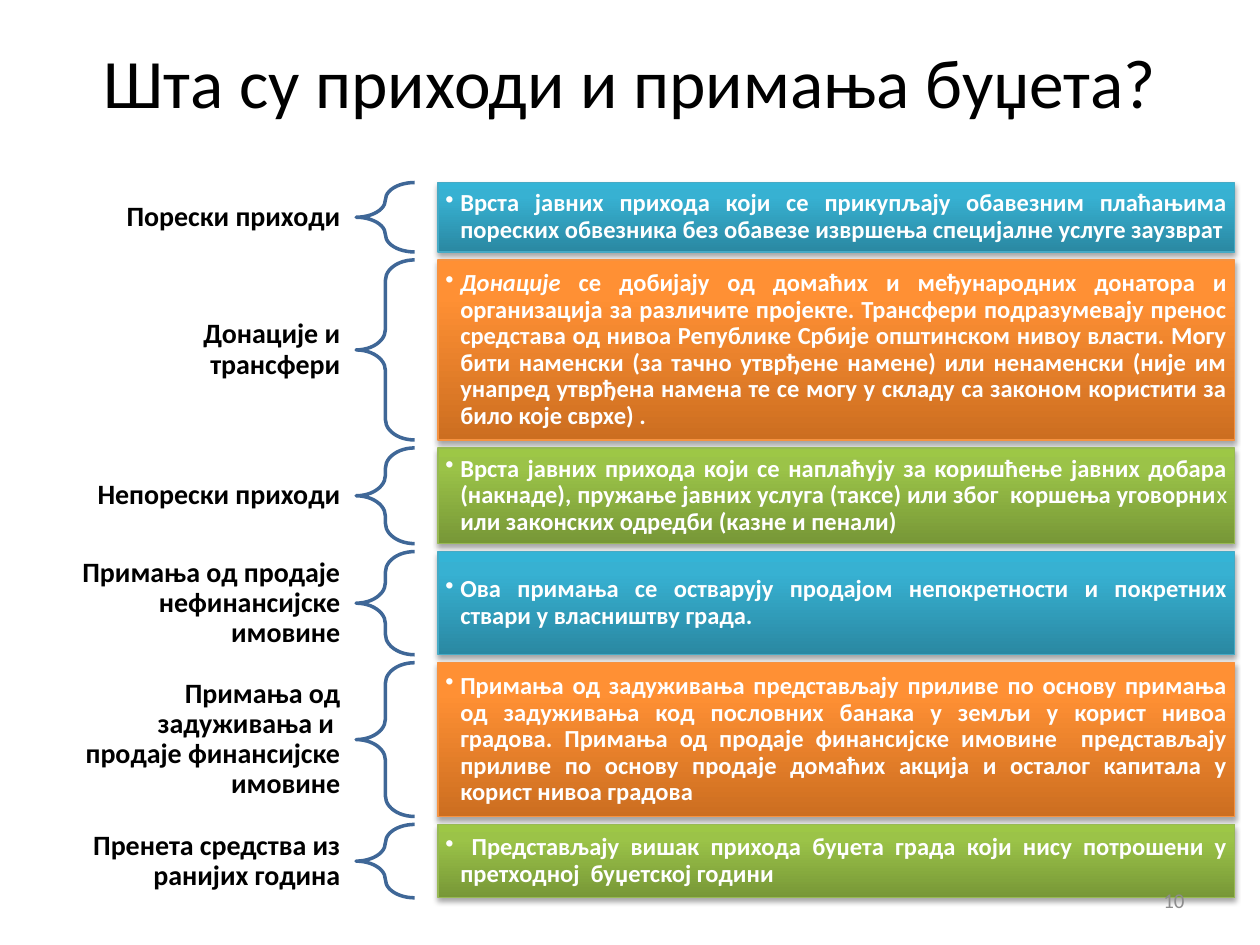
from dataclasses import dataclass

from pptx import Presentation
from pptx import util as u
from pptx.dml.color import RGBColor
from pptx.enum import shapes, text
from pptx.oxml import parse_xml
from pptx.oxml.ns import nsdecls, qn

Cm, Pt = u.Cm, u.Pt

FONT = "Calibri"
BLACK = RGBColor(0x00, 0x00, 0x00)
WHITE = RGBColor(0xFF, 0xFF, 0xFF)
GREY = RGBColor(0x8C, 0x8C, 0x8C)
BRACE_BLUE = RGBColor(0x3F, 0x67, 0x97)

MARGIN = 1.27
LABEL_WIDTH = 5.9
BRACE_LEFT, BRACE_WIDTH = 7.18, 1.18
PANEL_LEFT, PANEL_WIDTH = 8.83, 16.06
FIRST_TOP, ROW_GAP = 3.68, 0.16


@dataclass(frozen=True)
class Palette:
    bottom: RGBColor
    upper: RGBColor
    top: RGBColor
    border: RGBColor


@dataclass(frozen=True)
class Span:
    wording: str
    bold: bool = True
    italic: bool = False


@dataclass(frozen=True)
class Revenue:
    label: str
    height: float
    palette: Palette
    spans: tuple[Span, ...]


TEAL = Palette(RGBColor(0x2A, 0x88, 0xA2), RGBColor(0x37, 0xB1, 0xD2),
               RGBColor(0x34, 0xB4, 0xD6), RGBColor(0x46, 0xAA, 0xC5))
ORANGE = Palette(RGBColor(0xCC, 0x6E, 0x20), RGBColor(0xFF, 0x90, 0x34),
                 RGBColor(0xFF, 0x91, 0x36), RGBColor(0xF6, 0x92, 0x40))
GREEN = Palette(RGBColor(0x77, 0x97, 0x37), RGBColor(0x9B, 0xC3, 0x48),
                RGBColor(0x9D, 0xC7, 0x46), RGBColor(0x98, 0xB9, 0x55))

REVENUES = (
    Revenue("Порески приходи", 1.4, TEAL, (
        Span("Врста јавних прихода који се прикупљају обавезним плаћањима "
             "пореских обвезника без обавезе извршења специјалне услуге заузврат"),)),
    Revenue("Донације и трансфери", 3.63, ORANGE, (
        Span("Донације", italic=True),
        Span(" се добијају од домаћих и међународних донатора и организација за "
             "различите пројекте. Трансфери подразумевају пренос средстава од нивоа "
             "Републике Србије општинском нивоу власти. Могу бити наменски (за тачно "
             "утврђене намене) или ненаменски (није им унапред утврђена намена те се "
             "могу у складу са законом користити за било које сврхе) ."))),
    Revenue("Непорески приходи", 1.93, GREEN, (
        Span("Врста јавних прихода који се наплаћују за коришћење јавних добара "
             "(накнаде), пружање јавних услуга (таксе) или због  коршења уговорни"),
        Span("х ", bold=False),
        Span("или законских одредби (казне и пенали)"))),
    Revenue("Примања од продаје нефинансијске имовине", 2.08, TEAL, (
        Span("Ова примања се остварују продајом непокретности и покретних ствари "
             "у власништву града."),)),
    Revenue("Примања од задуживања и  продаје финансијске имовине", 3.1, ORANGE, (
        Span("Примања од задуживања представљају приливе по основу примања од "
             "задуживања код пословних банака у земљи у корист нивоа градова. "
             "Примања од продаје финансијске имовине  представљају приливе по основу "
             "продаје домаћих акција и осталог капитала у корист нивоа градова"),)),
    Revenue("Пренета средства из ранијих година", 1.48, GREEN, (
        Span(" Представљају вишак прихода буџета града који нису потрошени у "
             "претходној  буџетској години"),)),
)


def style_run(run, size: float, color: RGBColor, bold: bool = False,
              italic: bool = False) -> None:
    run.font.name = FONT
    run.font.size = Pt(size)
    run.font.color.rgb = color
    run.font.bold = bold
    run.font.italic = italic


def set_frame(frame, side: float, end: float) -> None:
    """Wrap and centre vertically, with insets in centimetres."""
    frame.word_wrap = True
    frame.vertical_anchor = text.MSO_ANCHOR.MIDDLE
    frame.margin_left = frame.margin_right = Cm(side)
    frame.margin_top = frame.margin_bottom = Cm(end)


def add_caption(slide, wording: str, left: float, top: float, width: float,
                height: float, size: float, align, color: RGBColor = BLACK,
                bold: bool = False, side: float = 0.25, end: float = 0.13,
                spacing: float = 1.0) -> None:
    frame = slide.shapes.add_textbox(Cm(left), Cm(top), Cm(width), Cm(height)).text_frame
    set_frame(frame, side, end)
    frame.text = wording
    paragraph = frame.paragraphs[0]
    paragraph.alignment = align
    paragraph.line_spacing = spacing
    style_run(paragraph.runs[0], size, color, bold)


def add_brace(slide, top: float, height: float) -> None:
    brace = slide.shapes.add_shape(shapes.MSO_SHAPE.LEFT_BRACE, Cm(BRACE_LEFT), Cm(top),
                                   Cm(BRACE_WIDTH), Cm(height))
    brace.shadow.inherit = False
    brace.adjustments[0] = 0.35
    brace.adjustments[1] = 0.5
    brace.fill.background()
    brace.line.color.rgb = BRACE_BLUE
    brace.line.width = Pt(2)


def paint_panel(panel, palette: Palette) -> None:
    """Give the panel a three-stop upward gradient, a border and a soft shadow."""
    panel.fill.gradient()
    stops = "".join(
        f'<a:gs pos="{position}"><a:srgbClr val="{color}"/></a:gs>'
        for position, color in ((0, palette.bottom), (80000, palette.upper),
                                (100000, palette.top)))
    properties = panel.fill._xPr
    properties.replace(properties.find(qn("a:gradFill")), parse_xml(
        f'<a:gradFill {nsdecls("a")} rotWithShape="1"><a:gsLst>{stops}</a:gsLst>'
        '<a:lin ang="16200000" scaled="0"/></a:gradFill>'))
    panel.line.color.rgb = palette.border
    panel.line.width = Pt(0.75)
    panel.shadow.inherit = False
    properties.find(qn("a:effectLst")).append(parse_xml(
        f'<a:outerShdw {nsdecls("a")} blurRad="{Pt(3.1)}" dist="{Pt(1.8)}" dir="5400000" '
        'rotWithShape="0"><a:srgbClr val="000000"><a:alpha val="35000"/></a:srgbClr>'
        '</a:outerShdw>'))


def add_panel(slide, revenue: Revenue, top: float) -> None:
    panel = slide.shapes.add_shape(shapes.MSO_SHAPE.RECTANGLE, Cm(PANEL_LEFT), Cm(top),
                                   Cm(PANEL_WIDTH), Cm(revenue.height))
    paint_panel(panel, revenue.palette)
    set_frame(panel.text_frame, 0.15, 0.15)
    paragraph = panel.text_frame.paragraphs[0]
    paragraph.alignment = text.PP_ALIGN.JUSTIFY
    paragraph.level = 1
    paragraph.line_spacing = 0.9
    for span in revenue.spans:
        run = paragraph.add_run()
        run.text = span.wording
        style_run(run, 14, WHITE, span.bold, span.italic)
    bullet = paragraph._p.get_or_add_pPr()
    bullet.set("marL", str(Cm(0.3)))
    bullet.set("indent", str(-Cm(0.3)))
    bullet.append(parse_xml(f'<a:buChar {nsdecls("a")} char="•"/>'))


def add_revenue(slide, revenue: Revenue, top: float) -> None:
    add_caption(slide, revenue.label, MARGIN, top, LABEL_WIDTH, revenue.height, 16,
                text.PP_ALIGN.RIGHT, bold=True, side=0.31, end=0.1, spacing=0.9)
    add_brace(slide, top, revenue.height)
    add_panel(slide, revenue, top)


def main() -> None:
    deck = Presentation()
    deck.slide_width, deck.slide_height = Cm(25.4), Cm(19.05)
    slide = deck.slides.add_slide(deck.slide_layouts[6])
    add_caption(slide, "Шта су приходи и примања буџета?", MARGIN, 0.76, 22.86, 1.73,
                39.6, text.PP_ALIGN.CENTER)
    top = FIRST_TOP
    for revenue in REVENUES:
        add_revenue(slide, revenue, top)
        top += revenue.height + ROW_GAP
    add_caption(slide, "10", 18.2, 17.65, 5.93, 1.01, 12, text.PP_ALIGN.RIGHT, GREY)
    deck.save("out.pptx")


if __name__ == "__main__":
    main()
